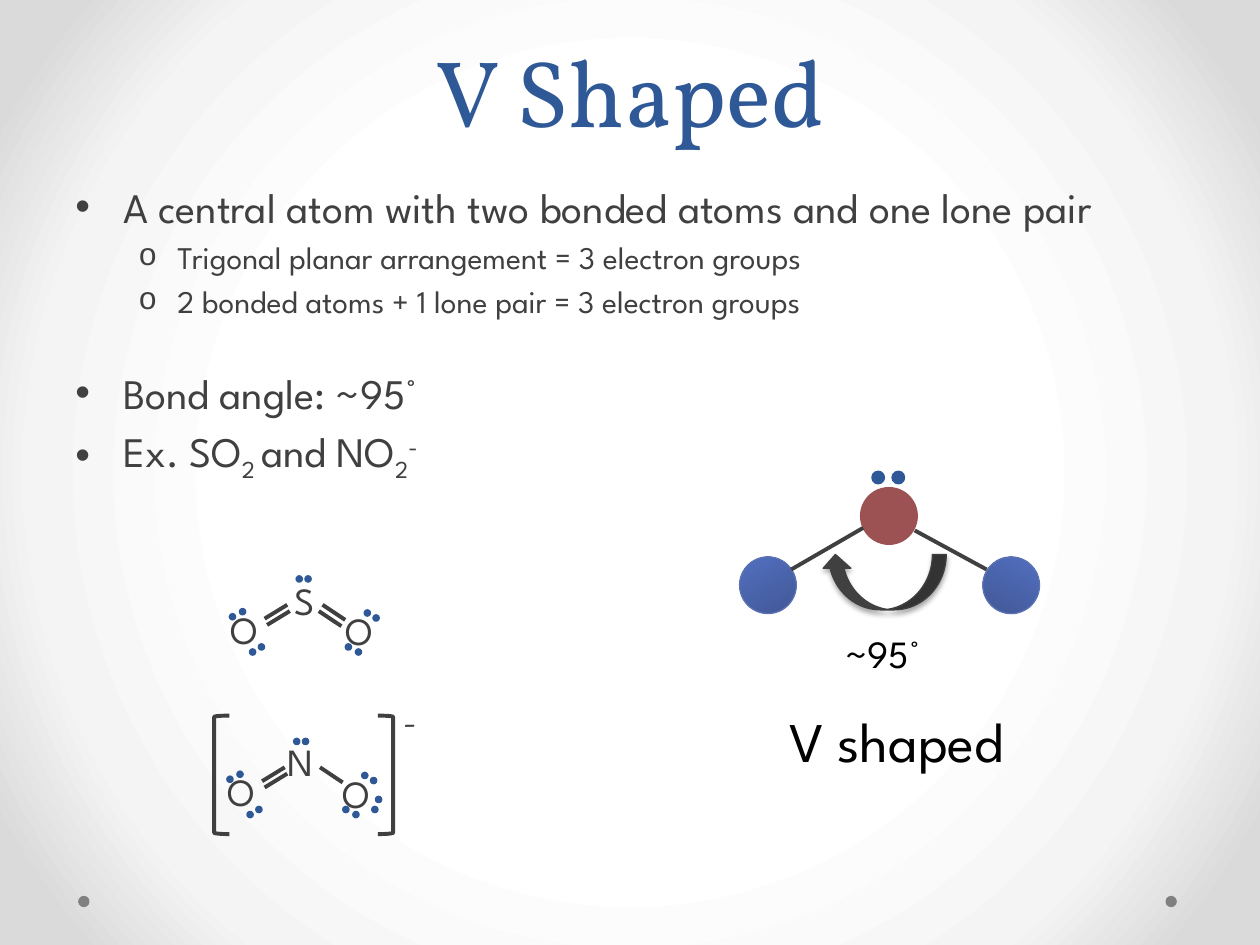
from dataclasses import dataclass
from typing import Any

from pptx import Presentation
from pptx import util as u
from pptx.dml.color import RGBColor
from pptx.enum import shapes, text
from pptx.oxml import parse_xml
from pptx.oxml.ns import nsdecls, qn

BLUE = RGBColor(0x2F, 0x58, 0x97)
DARK = RGBColor(0x40, 0x40, 0x40)
BLACK = RGBColor(0, 0, 0)
GREY = RGBColor(0x80, 0x80, 0x80)
RED = RGBColor(0x9C, 0x52, 0x52)
BALL_LINE = RGBColor(0x5C, 0x72, 0xB2)
SANS, SERIF = "League Spartan", "Vollkorn"
Point = tuple[float, float]


@dataclass
class Bullet:
    runs: list[tuple[str, int]]  # wording, baseline shift in percent
    size: int = 24
    mark: str = "•"
    mark_font: str = "Arial"
    indent: tuple[float, float] = (0.38, -0.38)
    before: float = 4.8


@dataclass
class Molecule:
    center: str
    center_at: Point
    shift: Point
    bonds: list[tuple[Point, Point]]
    dots: list[Point]


def gradient(stops: list[tuple[int, str]], direction: str) -> Any:
    gs = "".join(f'<a:gs pos="{pos * 1000}"><a:srgbClr val="{color}"/></a:gs>'
                 for pos, color in stops)
    return parse_xml(f'<a:gradFill {nsdecls("a")} rotWithShape="1">'
                     f'<a:gsLst>{gs}</a:gsLst>{direction}</a:gradFill>')


def replace_fill(fill: Any, parent: Any, new: Any) -> None:
    fill.solid()
    parent.replace(parent.find(qn("a:solidFill")), new)


def set_font(r: Any, size: float, color: RGBColor, name: str) -> None:
    for key, value in {"size": u.Pt(size), "name": name}.items():
        setattr(r.font, key, value)
    r.font.color.rgb = color


def add_label(parent: Any, wording: str, box: tuple[float, ...], size: float,
              color: RGBColor = DARK, font: str = SANS, wrap: bool = True, **fmt: Any) -> Any:
    s = parent.add_textbox(*map(u.Inches, box))
    tf = s.text_frame
    tf.word_wrap = wrap
    p = tf.paragraphs[0]
    for key, value in fmt.items():
        setattr(p, key, value)
    r = p.add_run()
    r.text = wording
    set_font(r, size, color, font)
    return s


def add_preset(parent: Any, kind: Any, box: tuple[float, ...], fill: RGBColor | None,
               line: RGBColor | None, width: float = 0.75, rotation: float = 0) -> Any:
    s = parent.add_shape(kind, *map(u.Inches, box))
    s.shadow.inherit = False
    s.rotation = rotation
    for part, color in ((s.fill, fill), (s.line.fill, line)):
        if color is None:
            part.background()
        else:
            part.solid()
            part.fore_color.rgb = color
    if line is not None:
        s.line.width = u.Pt(width)
    return s


def add_circle(parent: Any, x: float, y: float, size: float, fill: RGBColor,
               line: RGBColor | None, rotation: float = 0) -> Any:
    return add_preset(parent, shapes.MSO_SHAPE.OVAL, (x, y, size, size), fill, line,
                      rotation=rotation)


def add_bond(parent: Any, start: Point, end: Point) -> None:
    s = parent.add_connector(shapes.MSO_CONNECTOR.STRAIGHT, *map(u.Inches, (*start, *end)))
    s.line.color.rgb = DARK
    s.line.width = u.Pt(2.25)
    s._element.spPr.append(parse_xml(f'<a:effectLst {nsdecls("a")}/>'))


def add_bullet(p: Any, item: Bullet) -> None:
    p.space_before = u.Pt(item.before)
    pPr = p._p.get_or_add_pPr()
    for key, value in zip(("marL", "indent"), item.indent):
        pPr.set(key, str(u.Inches(value)))
    pPr.append(parse_xml(f'<a:buFont {nsdecls("a")} typeface="{item.mark_font}"/>'))
    pPr.append(parse_xml(f'<a:buChar {nsdecls("a")} char="{item.mark}"/>'))
    for wording, baseline in item.runs:
        r = p.add_run()
        r.text = wording
        set_font(r, item.size, DARK, SANS)
        if baseline:
            r.font._element.set("baseline", str(baseline * 1000))


def add_molecule(parent: Any, m: Molecule) -> None:
    g = parent.add_group_shape().shapes
    dx, dy = m.shift
    add_label(g, m.center, (*m.center_at, 0.45, 0.47), 22)
    for x, y in OXYGENS:
        add_label(g, "O", (x + dx, y + dy, 0.47, 0.47), 22, wrap=False)
    for (x1, y1), (x2, y2) in SHARED_BONDS + m.bonds:
        add_bond(g, (x1 + dx, y1 + dy), (x2 + dx, y2 + dy))
    for x, y in SHARED_DOTS + m.dots:
        add_circle(g, x + dx, y + dy, 0.05, BLUE, BLUE)


# Parts common to both Lewis structures
OXYGENS = [(1.73, 4.76), (2.64, 4.77)]
SHARED_BONDS = [((2.3, 4.85), (2.12, 4.96)), ((2.28, 4.8), (2.1, 4.91)),
                ((2.74, 4.92), (2.56, 4.8))]
SHARED_DOTS = [(2.42, 4.57), (2.35, 4.57), (2.89, 4.84), (2.96, 4.88), (2.74, 5.11),
               (2.82, 5.15), (1.9, 4.83), (1.82, 4.87), (2.05, 5.11), (1.98, 5.15)]
MOLECULES = [
    Molecule("S", (2.24, 4.53), (0, 0), [((2.71, 4.97), (2.53, 4.85))], []),
    Molecule("N", (2.18, 5.81), (-0.02, 1.29), [], [(3, 5.03), (2.97, 5.11)]),
]
SUB = dict(size=18, mark="o", mark_font="Courier New", indent=(0.81, -0.31), before=3.6)
BULLETS = [
    Bullet([("A central atom with two bonded atoms and one lone pair", 0)]),
    Bullet([("Trigonal planar arrangement = 3 electron groups", 0)], **SUB),
    Bullet([("2 bonded atoms + 1 lone pair = 3 electron groups", 0)], **SUB),
    Bullet([("Bond angle: ~95°", 0)], before=27),
    Bullet([("Ex. SO", 0), ("2 ", -25), ("and NO", 0), ("2", -25), ("-", 30)]),
]


def main() -> None:
    prs = Presentation()
    prs.slide_width, prs.slide_height = u.Inches(10), u.Inches(7.5)
    slide = prs.slides.add_slide(prs.slide_layouts[6])
    sh = slide.shapes

    # Background and corner dots
    fill = slide.background.fill
    fill.solid()
    replace_fill(fill, slide._element.cSld.bg.bgPr, gradient(
        [(50, "FFFFFF"), (76, "F4F4F4"), (92, "DADADA")],
        '<a:path path="circle"><a:fillToRect l="50000" t="50000" r="50000" b="50000"/></a:path>'))
    for x in (9.25, 0.62):
        add_circle(sh, x, 7.11, 0.09, GREY, None)

    # Title and bullets
    centered = {"alignment": text.PP_ALIGN.CENTER}
    title = add_label(sh, "V Shaped", (0.5, 0, 9, 1.21), 54, BLUE, SERIF,
                      line_spacing=u.Pt(58), **centered)
    title.text_frame.vertical_anchor = text.MSO_ANCHOR.BOTTOM
    tf = sh.add_textbox(*map(u.Inches, (0.5, 1.39, 9, 5.53))).text_frame
    tf.word_wrap = True
    for i, item in enumerate(BULLETS):
        add_bullet(tf.add_paragraph() if i else tf.paragraphs[0], item)

    # Lewis structures, brackets and charge
    for m in MOLECULES:
        add_molecule(sh, m)
    for x, flipped in ((1.7, False), (3, True)):
        s = add_preset(sh, shapes.MSO_SHAPE.LEFT_BRACKET, (x, 5.68, 0.12, 0.94), None, DARK, 2.25)
        if flipped:
            s._element.spPr.xfrm.set("flipH", "1")
    add_label(sh, "-", (3.1, 5.53, 0.25, 0.4), 18, font=SERIF)

    # Ball-and-stick model
    g = sh.add_group_shape().shapes
    add_label(g, "V shaped", (5.91, 5.56, 2.41, 0.64), 32, BLACK, **centered)
    add_label(g, "~95°", (6.61, 4.95, 0.97, 0.47), 22, BLACK)
    add_circle(g, 6.83, 3.87, 0.45, RED, RED)
    for x, rotation, start, end in ((5.87, 330.2, (6.28, 4.52), (6.85, 4.19)),
                                    (7.8, 28.9, (7.26, 4.21), (7.83, 4.52))):
        ball = add_circle(g, x, 4.42, 0.45, BALL_LINE, BALL_LINE, rotation)
        replace_fill(ball.fill, ball._element.spPr, gradient(
            [(0, "3E5490"), (80, "516DBB"), (100, "4F6CBE")], '<a:lin ang="16200000" scaled="0"/>'))
        add_bond(g, start, end)
    for x in (7.08, 6.92):
        add_circle(g, x, 3.74, 0.1, BLUE, BLUE)
    arrow = add_preset(g, shapes.MSO_SHAPE.CURVED_DOWN_ARROW, (6.52, 4.4, 0.99, 0.44),
                       DARK, DARK, rotation=180)
    arrow._element.spPr.find(qn("a:effectLst")).append(parse_xml(
        f'<a:outerShdw {nsdecls("a")} blurRad="{u.Pt(3.1)}" dist="{u.Pt(1.8)}" dir="5400000" '
        'rotWithShape="0"><a:srgbClr val="000000"><a:alpha val="35000"/></a:srgbClr></a:outerShdw>'))

    prs.save("out.pptx")


if __name__ == "__main__":
    main()
